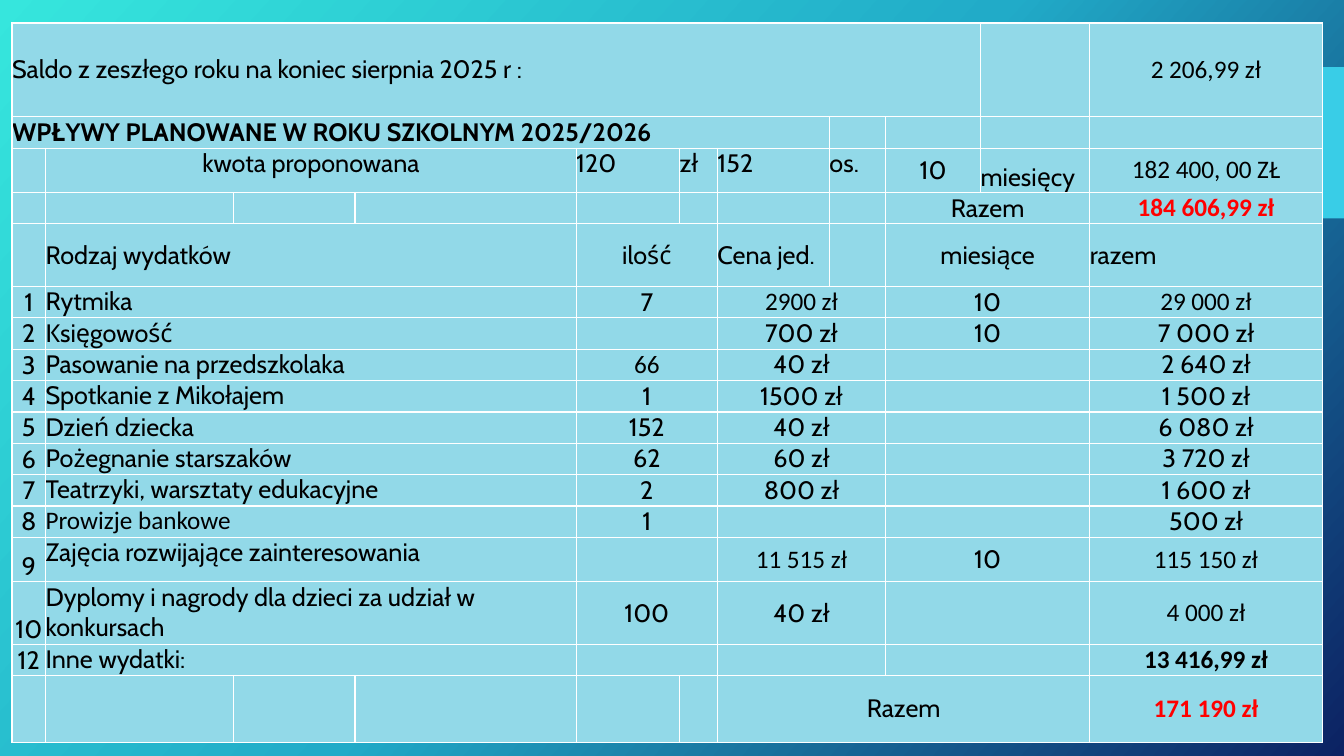
import copy
import pptx
import pptx.dml.color
import pptx.enum.shapes
import pptx.enum.text
import pptx.oxml
import pptx.oxml.ns
import pptx.util

Pt = pptx.util.Pt
RGB = pptx.dml.color.RGBColor.from_string
qn = pptx.oxml.ns.qn
ALIGN = pptx.enum.text.PP_ALIGN
ANCHOR = pptx.enum.text.MSO_ANCHOR
LEFT, CENTER = ALIGN.LEFT, ALIGN.CENTER
TOP, MIDDLE, BOTTOM = ANCHOR.TOP, ANCHOR.MIDDLE, ANCHOR.BOTTOM

theme = {
    "gradient": [(0, "36E6DD"), (0.5, "21ABC8"), (1, "0C2263")],
    "accent": "39CDE7",
    "cell": "92D9E8",
    "border": "FFFFFF",
    "text": "000000",
    "total": "FF0000",
    "size": 18,
    "main": "Cabin",
    "figures": "Calibri",
}

prs = pptx.Presentation()
prs.slide_width, prs.slide_height = Pt(960), Pt(540)
slide = prs.slides.add_slide(prs.slide_layouts[6])

# Background gradient with three stops
backdrop = slide.background.fill
backdrop.gradient()
backdrop.gradient_angle = 318
stop_list = next(slide.element.iter(qn("a:gsLst")))
stop_list.append(copy.deepcopy(stop_list[0]))
for stop, (position, color) in zip(backdrop.gradient_stops, theme["gradient"]):
    stop.position = position
    stop.color.rgb = RGB(color)

# Accent block at the right edge
accent = slide.shapes.add_shape(
    pptx.enum.shapes.MSO_SHAPE.RECTANGLE, Pt(834), Pt(48), Pt(126), Pt(108))
accent.shadow.inherit = False
accent.fill.solid()
accent.fill.fore_color.rgb = RGB(theme["accent"])
accent.line.fill.background()

# Budget table grid
widths = [24, 134, 87, 158, 74, 27, 80, 40, 68, 78, 166]
line = 22.4
heights = [67, line, 31.7, line, 2 * line] + [line] * 8 + [31.7, 2 * line, line, 47.5]
budget = slide.shapes.add_table(
    len(heights), len(widths), Pt(8.6), Pt(16.4), Pt(sum(widths)), Pt(sum(heights))).table
budget.first_row = False
budget.horz_banding = False
for column, width in zip(budget.columns, widths):
    column.width = Pt(width)
for row, height in zip(budget.rows, heights):
    row.height = Pt(height)

# Fill, margins and white borders of every cell
for cell in budget.iter_cells():
    cell.margin_left = cell.margin_right = cell.margin_top = cell.margin_bottom = 0
    cell.fill.solid()
    cell.fill.fore_color.rgb = RGB(theme["cell"])
    for index, side in enumerate(("lnL", "lnR", "lnT", "lnB")):
        border = pptx.oxml.parse_xml(
            f'<a:{side} {pptx.oxml.ns.nsdecls("a")} w="{Pt(1)}"><a:solidFill>'
            f'<a:srgbClr val="{theme["border"]}"/></a:solidFill></a:{side}>')
        cell._tc.get_or_add_tcPr().insert(index, border)


def put(row, col, span, text, align=CENTER, anchor=MIDDLE,
        font="main", color="text", bold=False):
    cell = budget.cell(row, col)
    if span > 1:
        cell.merge(budget.cell(row, col + span - 1))
    if not text:
        return
    cell.text = text
    cell.vertical_anchor = anchor
    paragraph = cell.text_frame.paragraphs[0]
    paragraph.alignment = align
    paragraph.font.name = theme[font]
    paragraph.font.size = Pt(theme["size"])
    paragraph.font.bold = bold
    paragraph.font.color.rgb = RGB(theme[color])


# Opening balance and planned income
put(0, 0, 9, "Saldo z zeszłego roku na koniec sierpnia 2025 r :", LEFT)
put(0, 10, 1, "2 206,99 zł", font="figures")
put(1, 0, 7, "WPŁYWY PLANOWANE W ROKU SZKOLNYM 2025/2026", LEFT, TOP, bold=True)
put(2, 1, 3, "kwota proponowana", CENTER, TOP)
for col, text in enumerate(["120", "zł", "152", "os."], start=4):
    put(2, col, 1, text, LEFT, TOP)
put(2, 8, 1, "10")
put(2, 9, 1, "miesięcy", LEFT, BOTTOM)
put(2, 10, 1, "182 400, 00 ZŁ", font="figures")
put(3, 8, 2, "Razem", CENTER, BOTTOM)
put(3, 10, 1, "184 606,99 zł", font="figures", color="total", bold=True)

# Expense headings
put(4, 1, 3, "Rodzaj wydatków", LEFT)
put(4, 4, 2, "ilość")
put(4, 6, 1, "Cena jed.", LEFT)
put(4, 8, 2, "miesiące")
put(4, 10, 1, "razem", LEFT)

# Expenses: number, kind, quantity, unit price, months, total
expense_columns = [(0, 1, CENTER, BOTTOM), (1, 3, LEFT, TOP), (4, 2, CENTER, MIDDLE),
                   (6, 2, CENTER, MIDDLE), (8, 2, CENTER, MIDDLE), (10, 1, CENTER, MIDDLE)]
expenses = [
    ("1", "Rytmika", "7", "2900 zł", "10", "29 000 zł"),
    ("2", "Księgowość", "", "700 zł", "10", "7 000 zł"),
    ("3", "Pasowanie na przedszkolaka", "66", "40 zł", "", "2 640 zł"),
    ("4", "Spotkanie z Mikołajem", "1", "1500 zł", "", "1 500 zł"),
    ("5", "Dzień dziecka", "152", "40 zł", "", "6 080 zł"),
    ("6", "Pożegnanie starszaków", "62", "60 zł", "", "3 720 zł"),
    ("7", "Teatrzyki, warsztaty edukacyjne", "2", "800 zł", "", "1 600 zł"),
    ("8", "Prowizje bankowe", "1", "", "", "500 zł"),
    ("9", "Zajęcia rozwijające zainteresowania", "", "11 515 zł", "10", "115 150 zł"),
    ("10", "Dyplomy i nagrody dla dzieci za udział w konkursach", "100", "40 zł", "",
     "4 000 zł"),
    ("12", "Inne wydatki:", "", "", "", "13 416,99 zł"),
]
in_figures_font = {"2900 zł", "29 000 zł", "66", "Prowizje bankowe", "11 515 zł",
                   "115 150 zł", "4 000 zł", "13 416,99 zł"}
for row, expense in enumerate(expenses, start=5):
    for (col, span, align, anchor), text in zip(expense_columns, expense):
        put(row, col, span, text, align, anchor,
            font="figures" if text in in_figures_font else "main",
            bold=text == "13 416,99 zł")

# Total expenses
put(16, 6, 4, "Razem")
put(16, 10, 1, "171 190 zł", font="figures", color="total", bold=True)

prs.save("out.pptx")
